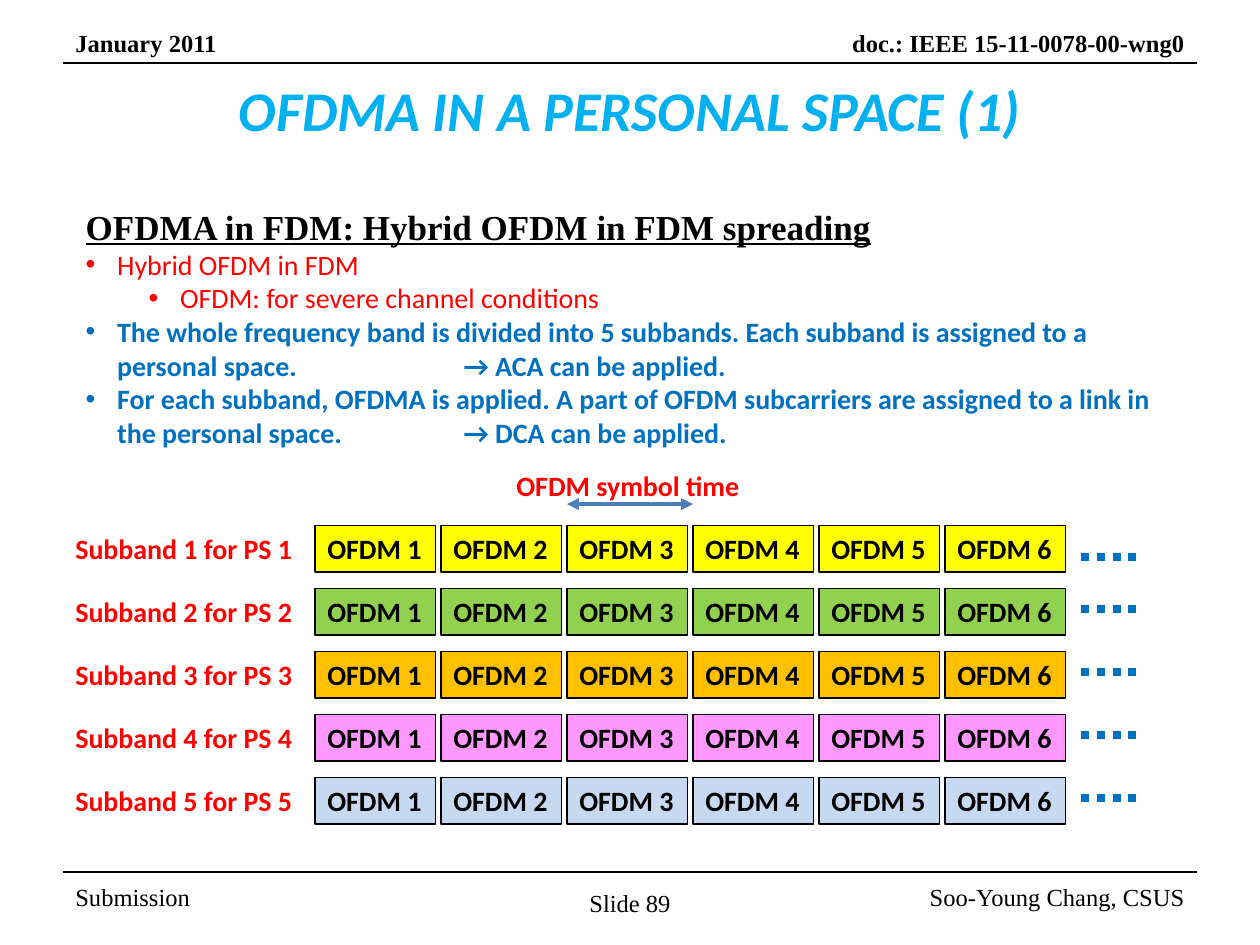
from dataclasses import dataclass

from lxml.etree import SubElement
from pptx import Presentation
from pptx.dml.color import RGBColor
from pptx.enum.dml import MSO_LINE
from pptx.enum.shapes import MSO_CONNECTOR, MSO_SHAPE
from pptx.enum.text import MSO_ANCHOR, MSO_AUTO_SIZE, PP_ALIGN
from pptx.oxml.ns import qn
from pptx.shapes.base import BaseShape
from pptx.shapes.connector import Connector
from pptx.slide import Slide
from pptx.text.text import TextFrame, _Paragraph
from pptx.util import Inches, Pt


@dataclass(frozen=True)
class Theme:
    serif: str = "Times New Roman"
    sans: str = "Calibri"
    black: str = "000000"
    white: str = "FFFFFF"
    red: str = "FF0000"
    blue: str = "0070C0"
    sky: str = "00B0F0"
    arrow: str = "4B7EBC"
    title: int = 32
    head: int = 20
    text: int = 16
    small: int = 14
    thin: float = 0.75


THEME = Theme()


@dataclass(frozen=True)
class Style:
    font: str
    size: int
    color: str
    bold: bool = False
    italic: bool = False
    under: bool = False


@dataclass(frozen=True)
class Item:
    text: str
    style: Style
    level: int = 0
    bullet: bool = True


@dataclass(frozen=True)
class Note:
    text: str
    box: tuple[float, float, float, float]
    style: Style
    align: PP_ALIGN = PP_ALIGN.LEFT
    anchor: MSO_ANCHOR = MSO_ANCHOR.TOP
    wrap: bool = True


@dataclass(frozen=True)
class Band:
    fill: str
    dots: float  # height of the dotted line


PLAIN = Style(THEME.serif, THEME.small, THEME.black)
STRONG = Style(THEME.serif, THEME.small, THEME.black, bold=True)
TITLE = Style(THEME.sans, THEME.title, THEME.sky, bold=True, italic=True)
HEAD = Style(THEME.serif, THEME.head, THEME.black, bold=True, under=True)
POINT = Style(THEME.sans, THEME.text, THEME.red)
CLAIM = Style(THEME.sans, THEME.text, THEME.blue, bold=True)
LABEL = Style(THEME.sans, THEME.text, THEME.red, bold=True)
CELL = Style(THEME.sans, THEME.text, THEME.black, bold=True)

ITEMS = [
    Item("OFDMA in FDM: Hybrid OFDM in FDM spreading", HEAD, bullet=False),
    Item("Hybrid OFDM in FDM", POINT),
    Item("OFDM: for severe channel conditions", POINT, level=1),
    Item("The whole frequency band is divided into 5 subbands. Each subband is "
         "assigned to a personal space. \t\t→ ACA can be applied.", CLAIM),
    Item("For each subband, OFDMA is applied. A part of OFDM subcarriers are "
         "assigned to a link in the personal space. \t→ DCA can be applied.", CLAIM),
]

NOTES = [
    Note("January 2011", (0.5, 0.17, 1.42, 0.34), STRONG),
    Note("doc.: IEEE 15-11-0078-00-wng0", (5.92, 0.17, 3.58, 0.34), STRONG, PP_ALIGN.RIGHT),
    Note("Submission", (0.5, 6.92, 2.33, 0.4), PLAIN, anchor=MSO_ANCHOR.MIDDLE),
    Note("Soo-Young Chang, CSUS", (7.17, 6.92, 2.33, 0.4), PLAIN, PP_ALIGN.RIGHT,
         MSO_ANCHOR.MIDDLE),
    Note("Slide 89", (4.58, 7, 0.85, 0.34), PLAIN, wrap=False),
    Note("OFDM symbol time", (4, 3.67, 2.05, 0.37), LABEL, wrap=False),
]

BANDS = [Band("FFFF00", 4.42), Band("92D050", 4.83), Band("FFC000", 5.33),
         Band("FF99FF", 5.83), Band("C6D9F1", 6.33)]
COLS = 6
LEFT, TOP = 2.5, 4.17
STEP, PITCH = 1.0, 0.5
WIDE, HIGH = 0.96, 0.37


def paint(para: _Paragraph, style: Style) -> None:
    for run in para.runs:
        font = run.font
        font.name, font.size = style.font, Pt(style.size)
        font.bold, font.italic, font.underline = style.bold, style.italic, style.under
        font.color.rgb = RGBColor.from_string(style.color)


def write(frame: TextFrame, text: str, style: Style,
          align: PP_ALIGN = PP_ALIGN.LEFT) -> None:
    frame.text = text
    para = frame.paragraphs[0]
    para.alignment = align
    paint(para, style)


def place(shape: BaseShape, x: float, y: float, w: float, h: float) -> None:
    shape.left, shape.top = Inches(x), Inches(y)
    shape.width, shape.height = Inches(w), Inches(h)


def add_note(slide: Slide, note: Note) -> None:
    frame = slide.shapes.add_textbox(*map(Inches, note.box)).text_frame
    frame.word_wrap = note.wrap
    frame.vertical_anchor = note.anchor
    write(frame, note.text, note.style, note.align)


def add_box(slide: Slide, x: float, y: float, w: float, text: str,
            style: Style, fill: str, edge: bool) -> None:
    box = slide.shapes.add_shape(MSO_SHAPE.RECTANGLE, *map(Inches, (x, y, w, HIGH)))
    box.shadow.inherit = False
    box.fill.solid()
    box.fill.fore_color.rgb = RGBColor.from_string(fill)
    if edge:
        box.line.color.rgb = RGBColor.from_string(THEME.black)
        box.line.width = Pt(THEME.thin)
    else:
        box.line.fill.background()
    box.text_frame.vertical_anchor = MSO_ANCHOR.TOP
    write(box.text_frame, text, style)


def add_line(slide: Slide, x: float, end: float, y: float,
             color: str, width: float) -> Connector:
    line = slide.shapes.add_connector(
        MSO_CONNECTOR.STRAIGHT, Inches(x), Inches(y), Inches(end), Inches(y))
    line.line.color.rgb = RGBColor.from_string(color)
    line.line.width = Pt(width)
    SubElement(line._element.spPr, qn("a:effectLst"))
    return line


def add_item(para: _Paragraph, item: Item) -> None:
    para.text = item.text
    para.level = item.level
    para.alignment = PP_ALIGN.LEFT
    para.space_before = Pt(0)
    paint(para, item.style)
    props = para._p.get_or_add_pPr()
    props.set("marL", str(Inches(0.25 + 0.5 * item.level)))
    props.set("indent", str(Inches(-0.25)))
    props.set("defTabSz", str(Inches(1)))
    if item.bullet:
        SubElement(props, qn("a:buFont"), typeface="Arial")
        SubElement(props, qn("a:buChar"), char="•")
    else:
        SubElement(props, qn("a:buNone"))


def main() -> None:
    deck = Presentation()
    deck.slide_width, deck.slide_height = Inches(10), Inches(7.5)
    slide = deck.slides.add_slide(deck.slide_layouts[1])

    # Title and list
    title, body = slide.shapes.title, slide.placeholders[1]
    place(title, 0.5, 0.3, 9, 1.25)
    title.text_frame.vertical_anchor = MSO_ANCHOR.MIDDLE
    write(title.text_frame, "OFDMA IN A PERSONAL SPACE (1)", TITLE, PP_ALIGN.CENTER)
    title.text_frame.paragraphs[0].line_spacing = Pt(30)
    place(body, 0.58, 1.58, 8.83, 2.05)
    frame = body.text_frame
    frame.auto_size = MSO_AUTO_SIZE.SHAPE_TO_FIT_TEXT
    for i, item in enumerate(ITEMS):
        add_item(frame.paragraphs[0] if i == 0 else frame.add_paragraph(), item)

    # Header, footer and caption
    for y in (0.5, 6.92):
        add_line(slide, 0.5, 9.5, y, THEME.black, THEME.thin)
    for note in NOTES:
        add_note(slide, note)

    # Subband rows
    for row, band in enumerate(BANDS):
        y = TOP + row * PITCH
        add_box(slide, 0.5, y, 2, f"Subband {row + 1} for PS {row + 1}",
                LABEL, THEME.white, edge=False)
        for col in range(COLS):
            add_box(slide, LEFT + col * STEP, y, WIDE, f"OFDM {col + 1}",
                    CELL, band.fill, edge=True)
        dots = add_line(slide, 8.58, 9.08, band.dots, THEME.blue, 4.5)
        dots.line.dash_style = MSO_LINE.ROUND_DOT

    # Symbol time arrow
    arrow = add_line(slide, 4.5, 5.5, 4, THEME.arrow, 2.25)
    for end in ("a:headEnd", "a:tailEnd"):
        SubElement(arrow.line._get_or_add_ln(), qn(end), type="triangle")

    deck.save("out.pptx")


if __name__ == "__main__":
    main()
